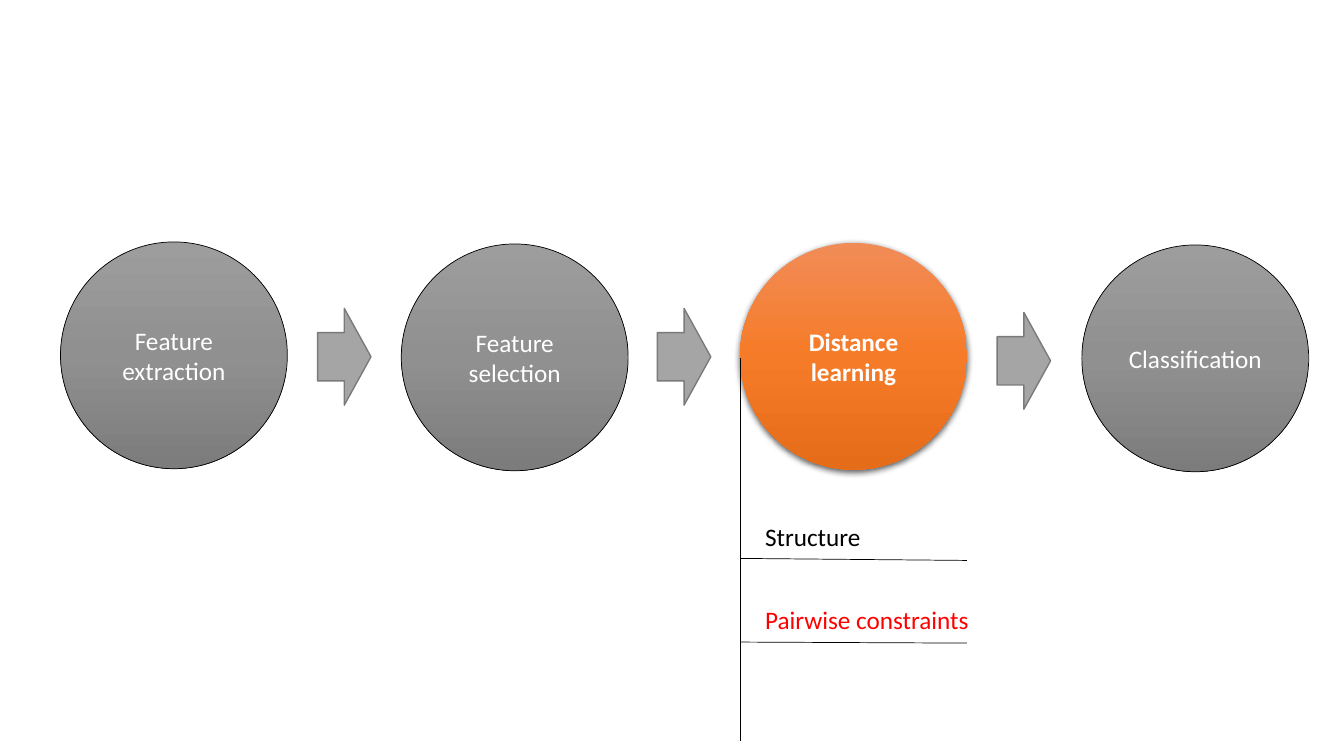
from lxml import etree
from pptx import Presentation
from pptx.dml.color import RGBColor
from pptx.enum.shapes import MSO_CONNECTOR, MSO_SHAPE
from pptx.enum.text import MSO_ANCHOR, MSO_AUTO_SIZE, PP_ALIGN
from pptx.oxml import parse_xml
from pptx.oxml.ns import nsdecls, qn
from pptx.util import Inches, Pt

BLACK = RGBColor(0x00, 0x00, 0x00)
WHITE = RGBColor(0xFF, 0xFF, 0xFF)
RED = RGBColor(0xFF, 0x00, 0x00)
ARROW_FILL = RGBColor(0xA5, 0xA5, 0xA5)
ARROW_LINE = RGBColor(0x7A, 0x7A, 0x7A)
GRAYS = (RGBColor(0x9D, 0x9D, 0x9D), RGBColor(0x90, 0x90, 0x90), RGBColor(0x7C, 0x7C, 0x7C))
ORANGES = (RGBColor(0xF1, 0x8C, 0x57), RGBColor(0xF6, 0x7B, 0x28), RGBColor(0xE5, 0x6C, 0x19))

DIAMETER = 2.25
STEM_X = 7.34


def set_font(p, color, bold=False):
    p.font.name = "Calibri"
    p.font.size = Pt(18)
    p.font.bold = bold
    p.font.color.rgb = color


def set_gradient(sp, colors):
    """Fill from top to bottom with evenly spaced colour stops."""
    sp.fill.gradient()
    sp.fill.gradient_angle = 270
    stops = sp.element.spPr.find(qn("a:gradFill")).find(qn("a:gsLst"))
    for stop in list(stops):
        stops.remove(stop)
    for i, color in enumerate(colors):
        pos = 100000 * i // (len(colors) - 1)
        stops.append(parse_xml(
            f'<a:gs {nsdecls("a")} pos="{pos}"><a:srgbClr val="{color}"/></a:gs>'))


def add_soft_shadow(sp):
    sp.element.spPr.find(qn("a:effectLst")).append(parse_xml(
        f'<a:outerShdw {nsdecls("a")} blurRad="{Pt(4.5)}" dist="{Pt(1.5)}" dir="5400000" '
        'algn="ctr" rotWithShape="0"><a:srgbClr val="000000"><a:alpha val="63000"/>'
        '</a:srgbClr></a:outerShdw>'))


def add_step(s, x, y, label, active=False):
    """Add a circle for one stage; the active one is orange and raised."""
    sp = s.shapes.add_shape(MSO_SHAPE.OVAL, Inches(x), Inches(y),
                            Inches(DIAMETER), Inches(DIAMETER))
    sp.shadow.inherit = False
    set_gradient(sp, ORANGES if active else GRAYS)
    if active:
        sp.line.fill.background()
        add_soft_shadow(sp)
    else:
        sp.line.color.rgb = BLACK
        sp.line.width = Pt(0.5)
    tf = sp.text_frame
    tf.word_wrap = True
    tf.vertical_anchor = MSO_ANCHOR.MIDDLE
    p = tf.paragraphs[0]
    p.text = label
    p.alignment = PP_ALIGN.CENTER
    set_font(p, WHITE, bold=active)


def add_arrow(s, x, y):
    sp = s.shapes.add_shape(MSO_SHAPE.RIGHT_ARROW, Inches(x), Inches(y),
                            Inches(0.53), Inches(0.96))
    sp.shadow.inherit = False
    sp.fill.solid()
    sp.fill.fore_color.rgb = ARROW_FILL
    sp.line.color.rgb = ARROW_LINE
    sp.line.width = Pt(1)


def add_line(s, x1, y1, x2, y2):
    line = s.shapes.add_connector(MSO_CONNECTOR.STRAIGHT, Inches(x1), Inches(y1),
                                  Inches(x2), Inches(y2))
    line.line.color.rgb = BLACK
    line.line.width = Pt(0.5)
    etree.SubElement(line.element.spPr, qn("a:effectLst"))


def add_label(s, y, width, text, color):
    box = s.shapes.add_textbox(Inches(STEM_X + 0.15), Inches(y), Inches(width), Inches(0.4))
    tf = box.text_frame
    tf.word_wrap = False
    tf.auto_size = MSO_AUTO_SIZE.SHAPE_TO_FIT_TEXT
    p = tf.paragraphs[0]
    p.text = text
    set_font(p, color)


def main():
    prs = Presentation()
    prs.slide_width = Inches(13.33)
    prs.slide_height = Inches(7.5)
    s = prs.slides.add_slide(prs.slide_layouts[6])

    add_step(s, 0.6, 2.4, "Feature extraction")
    add_step(s, 3.98, 2.42, "Feature selection")
    add_step(s, STEM_X, 2.41, "Distance learning", active=True)
    add_step(s, 10.73, 2.43, "Classification")
    for i, y in enumerate((3.06, 3.06, 3.1)):
        add_arrow(s, 3.15 + 3.37 * i, y)

    add_line(s, STEM_X, 3.55, STEM_X, 7.35)
    branches = [
        ("Structure", 5.12, 1.16, BLACK, 5.56),
        ("Pairwise constraints", 5.95, 2.24, RED, 6.38),
    ]
    for text, y, width, color, line_end in branches:
        add_line(s, STEM_X, y + 0.42, STEM_X + DIAMETER, line_end)
        add_label(s, y, width, text, color)

    prs.save("out.pptx")


if __name__ == "__main__":
    main()
